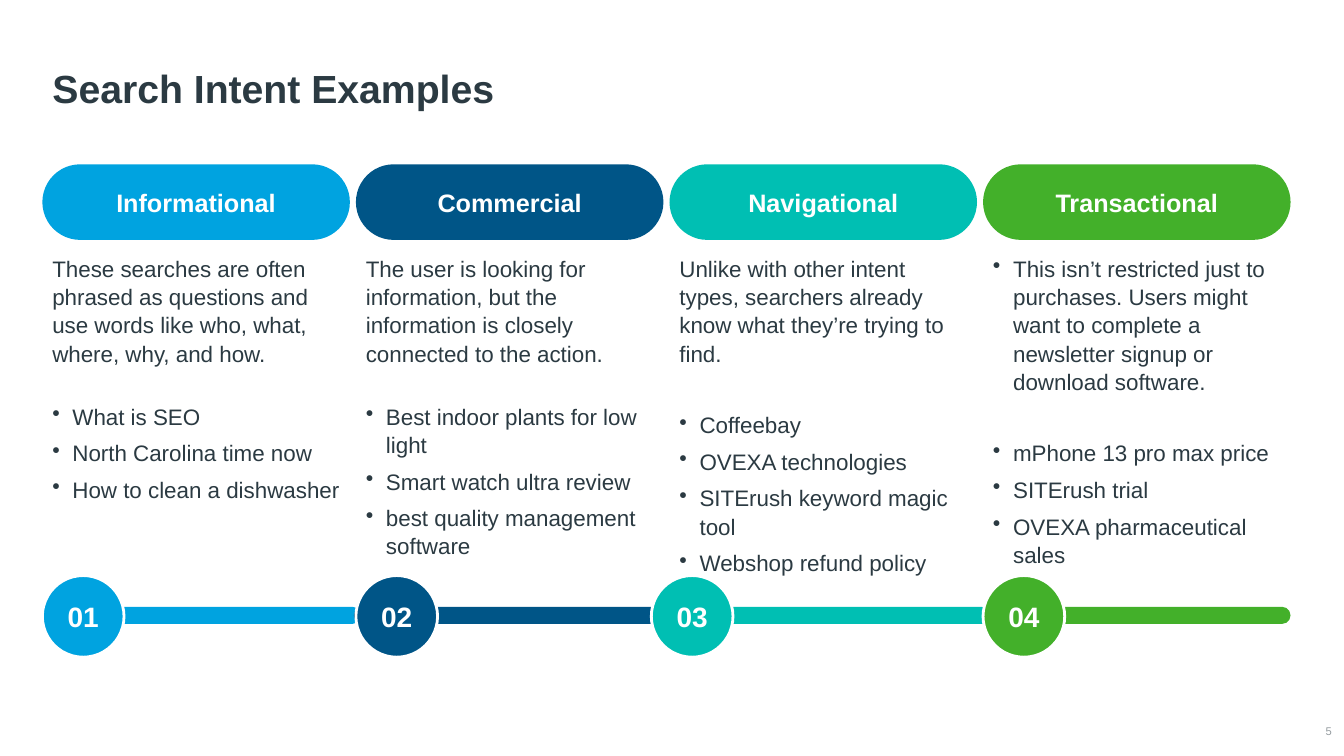
from dataclasses import dataclass

from lxml.etree import SubElement
from pptx import Presentation
from pptx.dml.color import RGBColor
from pptx.enum.shapes import MSO_SHAPE
from pptx.enum.text import MSO_ANCHOR, PP_ALIGN
from pptx.oxml.ns import qn
from pptx.shapes.autoshape import Shape
from pptx.slide import Slide
from pptx.text.text import TextFrame, _Paragraph
from pptx.util import Inches, Pt


@dataclass(frozen=True)
class Theme:
    font: str = "Arial"
    ink: str = "2B3A42"
    white: str = "FFFFFF"
    grey: str = "959CA0"
    title_size: int = 28
    heading_size: int = 18
    number_size: int = 20
    body_size: int = 16
    page_size: int = 8


@dataclass(frozen=True)
class Intent:
    name: str
    color: str
    description: str
    examples: tuple[str, ...]
    bar_left: float
    circle_left: float
    examples_gap: int = 25
    bulleted_description: bool = False


THEME = Theme()
COLUMN_LEFT, COLUMN_STEP = 0.42, 3.11

INTENTS = (
    Intent(
        "Informational", "00A3E0",
        "These searches are often phrased as questions and use words like who, what, where, why, and how.",
        ("What is SEO", "North Carolina time now", "How to clean a dishwasher"),
        bar_left=0.52, circle_left=0.42,
    ),
    Intent(
        "Commercial", "005587",
        "The user is looking for information, but the information is closely connected to the action.",
        ("Best indoor plants for low light", "Smart watch ultra review",
         "best quality management software"),
        bar_left=3.51, circle_left=3.53,
    ),
    Intent(
        "Navigational", "00BFB3",
        "Unlike with other intent types, searchers already know what they’re trying to find.",
        ("Coffeebay", "OVEXA technologies", "SITErush keyword magic tool",
         "Webshop refund policy"),
        bar_left=6.76, circle_left=6.46, examples_gap=31,
    ),
    Intent(
        "Transactional", "43B02A",
        "This isn’t restricted just to purchases. Users might want to complete a "
        "newsletter signup or download software.",
        ("mPhone 13 pro max price", "SITErush trial", "OVEXA pharmaceutical sales"),
        bar_left=9.74, circle_left=9.75, examples_gap=31, bulleted_description=True,
    ),
)


def write(paragraph: _Paragraph, text: str, size: int, color: str, bold: bool = False) -> None:
    paragraph.text = text
    for run in paragraph.runs:
        run.font.name = THEME.font
        run.font.size = Pt(size)
        run.font.bold = bold
        run.font.color.rgb = RGBColor.from_string(color)


def remove_insets(frame: TextFrame) -> None:
    frame.margin_left = frame.margin_right = frame.margin_top = frame.margin_bottom = 0


def add_bullet(paragraph: _Paragraph) -> None:
    properties = paragraph._p.get_or_add_pPr()
    properties.set("marL", str(Inches(0.2)))
    properties.set("indent", str(Inches(-0.2)))
    SubElement(properties, qn("a:buChar")).set("char", "•")


def add_filled_shape(slide: Slide, kind: MSO_SHAPE, left: float, top: float,
                     width: float, height: float, color: str) -> Shape:
    shape = slide.shapes.add_shape(kind, Inches(left), Inches(top), Inches(width), Inches(height))
    shape.shadow.inherit = False
    shape.fill.solid()
    shape.fill.fore_color.rgb = RGBColor.from_string(color)
    shape.line.fill.background()
    if kind == MSO_SHAPE.ROUNDED_RECTANGLE:
        shape.adjustments[0] = 0.5
    return shape


def label(shape: Shape, text: str, size: int) -> None:
    frame = shape.text_frame
    frame.vertical_anchor = MSO_ANCHOR.MIDDLE
    write(frame.paragraphs[0], text, size, THEME.white, bold=True)
    frame.paragraphs[0].alignment = PP_ALIGN.CENTER


def add_title(slide: Slide, text: str) -> None:
    title = slide.shapes.title
    title.left, title.top = Inches(0.42), Inches(0.32)
    title.width, title.height = Inches(12.4), Inches(0.84)
    title.text_frame.vertical_anchor = MSO_ANCHOR.BOTTOM
    paragraph = title.text_frame.paragraphs[0]
    write(paragraph, text, THEME.title_size, THEME.ink, bold=True)
    paragraph.alignment = PP_ALIGN.LEFT
    paragraph.line_spacing = 0.9


def add_page_number(slide: Slide, number: int) -> None:
    box = slide.shapes.add_textbox(Inches(12.82), Inches(7.16), Inches(0.39), Inches(0.19))
    frame = box.text_frame
    remove_insets(frame)
    frame.word_wrap = True
    frame.vertical_anchor = MSO_ANCHOR.MIDDLE
    write(frame.paragraphs[0], str(number), THEME.page_size, THEME.grey)
    frame.paragraphs[0].alignment = PP_ALIGN.RIGHT


def add_column(slide: Slide, intent: Intent, left: float) -> None:
    heading = add_filled_shape(slide, MSO_SHAPE.ROUNDED_RECTANGLE, left, 1.63, 3.05, 0.75, intent.color)
    label(heading, intent.name, THEME.heading_size)

    box = slide.shapes.add_textbox(Inches(left), Inches(2.47), Inches(3.08), Inches(3.01))
    frame = box.text_frame
    frame.word_wrap = True
    description = frame.paragraphs[0]
    if intent.bulleted_description:
        add_bullet(description)
    write(description, intent.description, THEME.body_size, THEME.ink)
    for index, example in enumerate(intent.examples):
        paragraph = frame.add_paragraph()
        add_bullet(paragraph)
        paragraph.space_before = Pt(6 if index else intent.examples_gap)
        write(paragraph, example, THEME.body_size, THEME.ink)
    for paragraph in frame.paragraphs:
        paragraph.line_spacing = 1.05


def add_timeline(slide: Slide) -> None:
    for intent in INTENTS:
        add_filled_shape(slide, MSO_SHAPE.ROUNDED_RECTANGLE, intent.bar_left, 6.02, 3.06, 0.17, intent.color)
    for number, intent in enumerate(INTENTS, start=1):
        circle = add_filled_shape(slide, MSO_SHAPE.OVAL, intent.circle_left, 5.71, 0.81, 0.81, intent.color)
        circle.line.color.rgb = RGBColor.from_string(THEME.white)
        circle.line.width = Pt(2)
        remove_insets(circle.text_frame)
        circle.text_frame.word_wrap = False
        label(circle, f"{number:02}", THEME.number_size)


def main() -> None:
    presentation = Presentation()
    presentation.slide_width, presentation.slide_height = Inches(13.33), Inches(7.5)
    slide = presentation.slides.add_slide(presentation.slide_layouts.get_by_name("Title Only"))
    add_page_number(slide, 5)
    add_title(slide, "Search Intent Examples")
    for index, intent in enumerate(INTENTS):
        add_column(slide, intent, COLUMN_LEFT + index * COLUMN_STEP)
    add_timeline(slide)
    presentation.save("out.pptx")


if __name__ == "__main__":
    main()
